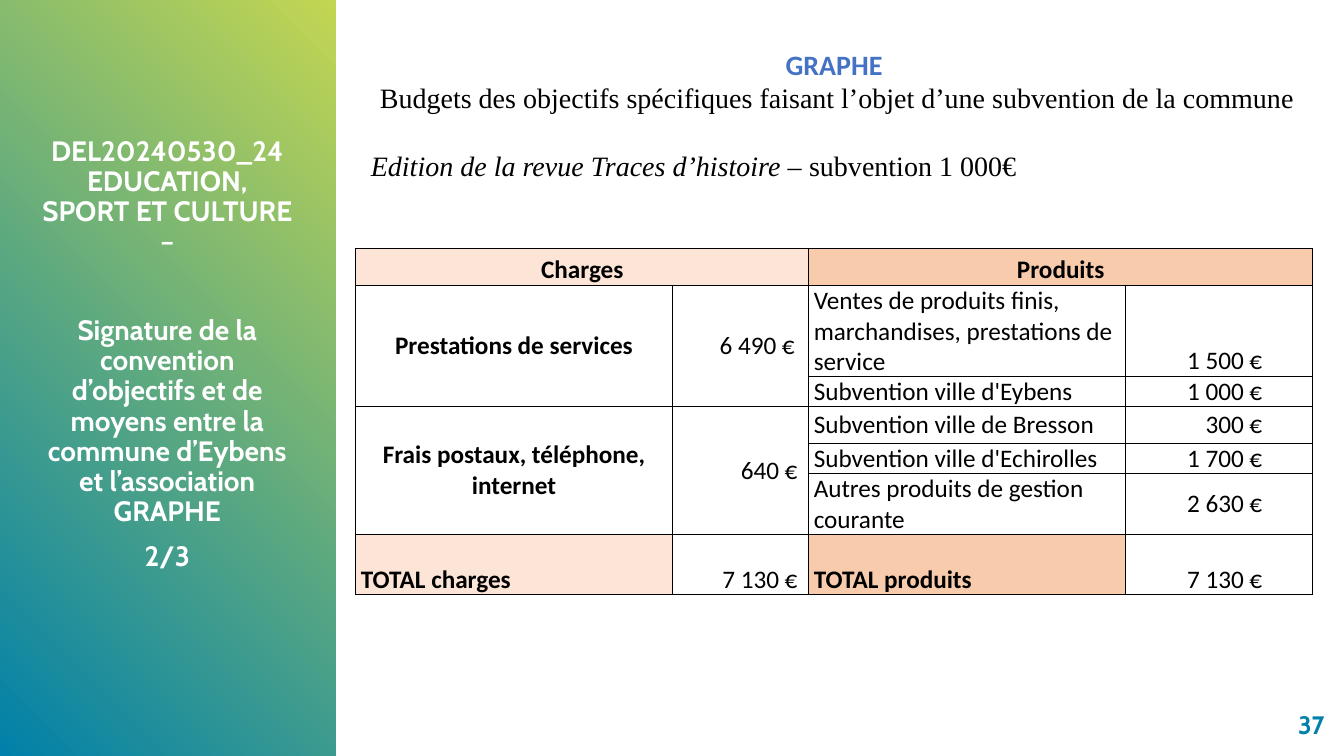
"""Build the GRAPHE budget slide with its side panel and table."""
from dataclasses import dataclass

from lxml import etree
from pptx import Presentation
from pptx.dml.color import RGBColor
from pptx.enum.shapes import MSO_SHAPE
from pptx.enum.text import MSO_ANCHOR, PP_ALIGN
from pptx.oxml.ns import qn
from pptx.util import Pt

LEFT, CENTER, RIGHT = PP_ALIGN.LEFT, PP_ALIGN.CENTER, PP_ALIGN.RIGHT
TOP, MIDDLE, BOTTOM = MSO_ANCHOR.TOP, MSO_ANCHOR.MIDDLE, MSO_ANCHOR.BOTTOM
RECTANGLE = MSO_SHAPE.RECTANGLE

BLACK, WHITE, BLUE, LIME = "000000", "FFFFFF", "0080AA", "C3D652"
PEACH, ORANGE = "FCE4D6", "F8CBAD"


@dataclass
class Line:
    """A paragraph; italic_lead is an italic opening run."""
    text: str
    font: str
    color: str
    size: float = 20
    bold: bool = False
    align: PP_ALIGN = CENTER
    before: float = 0
    spacing: float = 1
    italic_lead: str = ""


@dataclass
class TextBlock:
    """A text box with its place in points."""
    left: float
    top: float
    width: float
    height: float
    lines: list[Line]
    anchor: MSO_ANCHOR = TOP


@dataclass
class Entry:
    """A table cell with its span."""
    row: int
    column: int
    text: str
    align: PP_ALIGN = LEFT
    anchor: MSO_ANCHOR = MIDDLE
    bold: bool = False
    fill: str = ""
    rows: int = 1
    columns: int = 1
    right: float = 3.6


def rgb(color: str) -> RGBColor:
    """Turn a hex string into a colour."""
    return RGBColor.from_string(color)


def write_line(para, line: Line) -> None:
    """Fill a paragraph with one line."""
    para.alignment = line.align
    para.space_before = Pt(line.before)
    para.line_spacing = line.spacing
    if line.italic_lead:
        lead = para.add_run()
        lead.text = line.italic_lead
        lead.font.italic = True
    para.add_run().text = line.text
    font = para.font
    font.name, font.size, font.bold = line.font, Pt(line.size), line.bold
    font.color.rgb = rgb(line.color)


def add_text(page, block: TextBlock) -> None:
    """Draw a text box."""
    box = page.shapes.add_textbox(Pt(block.left), Pt(block.top),
                                  Pt(block.width), Pt(block.height))
    frame = box.text_frame
    frame.word_wrap = True
    frame.vertical_anchor = block.anchor
    for index, line in enumerate(block.lines):
        para = frame.add_paragraph() if index else frame.paragraphs[0]
        write_line(para, line)


def add_panel(page) -> None:
    """Draw the gradient side panel."""
    panel = page.shapes.add_shape(RECTANGLE, 0, 0, Pt(240), Pt(540))
    panel.shadow.inherit = False
    panel.line.fill.background()
    panel.fill.gradient()
    panel.fill.gradient_angle = 45
    for stop, color in zip(panel.fill.gradient_stops, (BLUE, LIME)):
        stop.color.rgb = rgb(color)


def add_borders(cell) -> None:
    """Give a cell thin black borders on all sides."""
    properties = cell._tc.get_or_add_tcPr()
    for side in ("lnL", "lnR", "lnT", "lnB"):
        border = etree.SubElement(properties, qn(f"a:{side}"), w=str(Pt(1)))
        solid = etree.SubElement(border, qn("a:solidFill"))
        etree.SubElement(solid, qn("a:srgbClr"), val=BLACK)


def add_budget(page, widths: list[float], heights: list[float],
               entries: list[Entry]) -> None:
    """Draw the budget table."""
    table = page.shapes.add_table(len(heights), len(widths), Pt(254.2), Pt(177.8),
                                  Pt(sum(widths)), Pt(sum(heights))).table
    table.first_row = table.horz_banding = False
    for column, width in zip(table.columns, widths):
        column.width = Pt(width)
    for row, height in zip(table.rows, heights):
        row.height = Pt(height)
    for cell in table.iter_cells():
        add_borders(cell)
        cell.fill.background()
        cell.margin_top = cell.margin_bottom = 0
        cell.margin_left = Pt(3.6)
    for entry in entries:
        cell = table.cell(entry.row, entry.column)
        if entry.rows > 1 or entry.columns > 1:
            cell.merge(table.cell(entry.row + entry.rows - 1,
                                  entry.column + entry.columns - 1))
        cell.margin_right = Pt(entry.right)
        cell.vertical_anchor = entry.anchor
        if entry.fill:
            cell.fill.solid()
            cell.fill.fore_color.rgb = rgb(entry.fill)
        write_line(cell.text_frame.paragraphs[0],
                   Line(entry.text, "Calibri", BLACK, 18, entry.bold, entry.align))


def side_line(text: str, before: float = 0) -> Line:
    """Make a line of the side panel."""
    return Line(text, "Cabin", WHITE, bold=True, before=before, spacing=0.9)


BLOCKS = [
    TextBlock(685.4, 502.6, 267.8, 29.5,
              [Line("37", "Cabin", BLUE, 18, True, RIGHT)], MIDDLE),
    TextBlock(23, 94.3, 193, 392.4, [
        side_line("DEL20240530_24 EDUCATION, SPORT ET CULTURE –"),
        side_line("Signature de la convention d’objectifs et de moyens entre "
                  "la commune d’Eybens et l’association GRAPHE", 41.6),
        side_line("2/3", 10)]),
    TextBlock(257.8, 30.2, 680.4, 104.4, [
        Line("GRAPHE ", "Calibri", "4472C4", bold=True),
        Line("Budgets des objectifs spécifiques faisant l’objet d’une subvention "
             "de la commune", "Times New Roman", BLACK),
        Line("subvention 1 000€", "Times New Roman", BLACK, align=LEFT, before=24.4,
             italic_lead="Edition de la revue Traces d’histoire – ")]),
]

PRODUCTS = [
    ("Ventes de produits finis, marchandises, prestations de service", "1 500 €"),
    ("Subvention ville d'Eybens", "1 000 €"),
    ("Subvention ville de Bresson", "300 €"),
    ("Subvention ville d'Echirolles", "1 700 €"),
    ("Autres produits de gestion courante", "2 630 €"),
]

ENTRIES = [
    Entry(0, 0, "Charges", CENTER, BOTTOM, True, PEACH, columns=2),
    Entry(0, 2, "Produits", CENTER, BOTTOM, True, ORANGE, columns=2),
    Entry(1, 0, "Prestations de services", CENTER, bold=True, rows=2),
    Entry(1, 1, "6 490 €", RIGHT, rows=2, right=10),
    Entry(3, 0, "Frais postaux, téléphone, internet", CENTER, bold=True, rows=3),
    Entry(3, 1, "640 €", RIGHT, rows=3, right=8),
    Entry(6, 0, "TOTAL charges", LEFT, BOTTOM, True, PEACH),
    Entry(6, 1, "7 130 €", RIGHT, BOTTOM, right=8),
    Entry(6, 2, "TOTAL produits", LEFT, BOTTOM, True, ORANGE),
    Entry(6, 3, "7 130 €", RIGHT, BOTTOM, right=36),
]
for number, (label, amount) in enumerate(PRODUCTS, 1):
    place = BOTTOM if number == 1 else MIDDLE
    ENTRIES += [Entry(number, 2, label, LEFT, place),
                Entry(number, 3, amount, RIGHT, place, right=36)]


def main() -> None:
    """Build and save the deck."""
    deck = Presentation()
    deck.slide_width, deck.slide_height = Pt(960), Pt(540)
    page = deck.slides.add_slide(deck.slide_layouts[6])
    add_panel(page)
    for block in BLOCKS:
        add_text(page, block)
    add_budget(page, [226, 97.5, 226, 134], [26, 65, 21.5, 26.4, 21.5, 43.5, 43], ENTRIES)
    deck.save("out.pptx")


if __name__ == "__main__":
    main()
